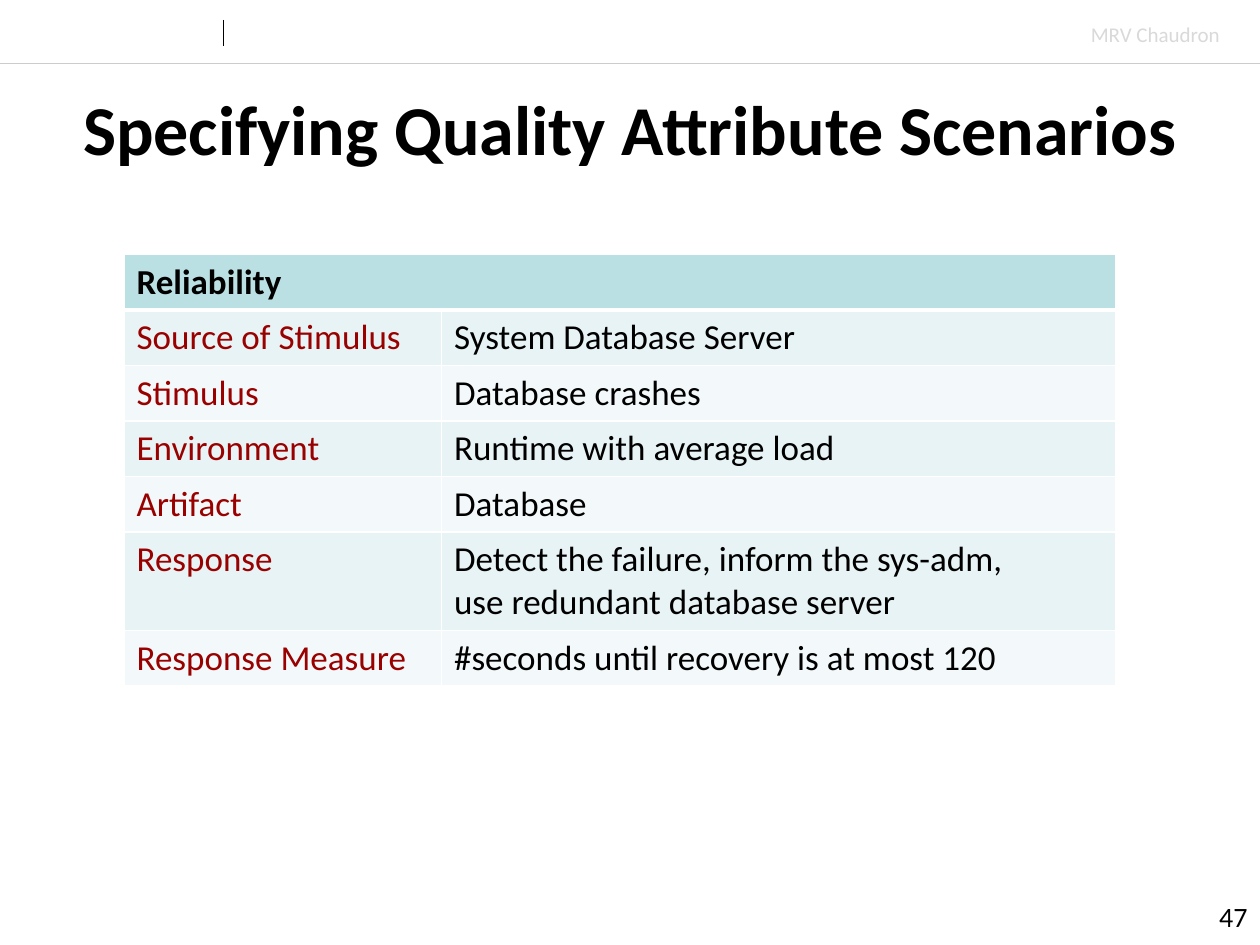
from lxml import etree
from pptx import Presentation
from pptx.dml.color import RGBColor
from pptx.enum.shapes import MSO_CONNECTOR
from pptx.enum.text import MSO_ANCHOR, MSO_AUTO_SIZE, PP_ALIGN
from pptx.oxml.ns import qn
from pptx.util import Cm, Pt

STRAIGHT = MSO_CONNECTOR.STRAIGHT
MIDDLE, TOP = MSO_ANCHOR.MIDDLE, MSO_ANCHOR.TOP
LEFT, CENTER, RIGHT = PP_ALIGN.LEFT, PP_ALIGN.CENTER, PP_ALIGN.RIGHT
NO_AUTOFIT = MSO_AUTO_SIZE.NONE

BLACK = RGBColor(0x00, 0x00, 0x00)
WHITE = RGBColor(0xFF, 0xFF, 0xFF)
RULE_GRAY = RGBColor(0xCC, 0xCC, 0xCC)
AUTHOR_GRAY = RGBColor(0xD9, 0xD9, 0xD9)
LABEL_RED = RGBColor(0x99, 0x00, 0x00)
HEADER_TEAL = RGBColor(0xBB, 0xE0, 0xE3)
BAND_COLORS = (RGBColor(0xE7, 0xF3, 0xF4), RGBColor(0xF3, 0xF9, 0xFA))

FONT_NAME = "Calibri"
TITLE = "Specifying Quality Attribute Scenarios"
ATTRIBUTE = "Reliability"
SCENARIO = (
    ("Source of Stimulus", "System Database Server"),
    ("Stimulus", "Database crashes"),
    ("Environment", "Runtime with average load"),
    ("Artifact", "Database"),
    ("Response", "Detect the failure, inform the sys-adm, \vuse redundant database server"),
    ("Response Measure", "#seconds until recovery is at most 120"),
)


def write_text(text_frame, text, size, color, bold=False, align=LEFT):
    text_frame.text = text
    paragraph = text_frame.paragraphs[0]
    paragraph.alignment = align
    for run in paragraph.runs:
        font_format = {"name": FONT_NAME, "size": Pt(size), "bold": bold}
        for attribute, value in font_format.items():
            setattr(run.font, attribute, value)
        run.font.color.rgb = color


def format_frame(text_frame, wrap, anchor):
    frame_format = {"word_wrap": wrap, "auto_size": NO_AUTOFIT, "vertical_anchor": anchor}
    for attribute, value in frame_format.items():
        setattr(text_frame, attribute, value)


def place(shape, box):
    for attribute, value in zip(("left", "top", "width", "height"), box):
        setattr(shape, attribute, value)


def add_rule(slide, start, end, color, width):
    connector = slide.shapes.add_connector(STRAIGHT, *start, *end)
    connector.line.color.rgb = color
    connector.line.width = Pt(width)
    etree.SubElement(connector._element.spPr, qn("a:effectLst"))


def add_header(slide, box):
    left, top, width, height = box
    bottom = top + height
    add_rule(slide, (left, bottom), (left + width, bottom), RULE_GRAY, 0.25)
    divider = left + Cm(4.5)
    add_rule(slide, (divider, top + Cm(0.4)), (divider, top + Cm(0.92)), BLACK, 0.5)
    author = slide.shapes.add_textbox(left + width - Cm(3.66), top + Cm(0.3), Cm(3.12), Cm(0.76))
    format_frame(author.text_frame, False, TOP)
    write_text(author.text_frame, "MRV Chaudron", 12, AUTHOR_GRAY)


def add_title(slide, box):
    title = slide.shapes.title
    place(title, box)
    format_frame(title.text_frame, True, MIDDLE)
    write_text(title.text_frame, TITLE, 40, BLACK, True, CENTER)


def add_page_number(slide, box):
    number = slide.shapes.add_textbox(*box)
    format_frame(number.text_frame, True, MIDDLE)
    write_text(number.text_frame, "47", 16, BLACK, align=RIGHT)


def set_borders(cell, widths):
    properties = cell._tc.get_or_add_tcPr()
    for side, width in widths.items():
        border = etree.SubElement(properties, qn(f"a:ln{side}"), w=str(Pt(width)))
        fill = etree.SubElement(border, qn("a:solidFill"))
        etree.SubElement(fill, qn("a:srgbClr"), val=str(WHITE))


def fill_cell(cell, text, text_color, fill_color, widths, bold=False):
    set_borders(cell, widths)
    cell.fill.solid()
    cell.fill.fore_color.rgb = fill_color
    if text:
        write_text(cell.text_frame, text, 20, text_color, bold)


def add_scenario_table(slide, box):
    table = slide.shapes.add_table(len(SCENARIO) + 1, 2, *box).table
    label_width = Cm(6.4)
    table.columns[0].width = label_width
    table.columns[1].width = box[2] - label_width
    thin = {"L": 1, "R": 1, "T": 1, "B": 1}
    header_borders = {**thin, "B": 3}
    table.cell(0, 0).merge(table.cell(0, 1))
    for column, text in enumerate((ATTRIBUTE, "")):
        fill_cell(table.cell(0, column), text, BLACK, HEADER_TEAL, header_borders, True)
    for row, entry in enumerate(SCENARIO, start=1):
        borders = {**thin, "T": 3} if row == 1 else thin
        band = BAND_COLORS[(row - 1) % 2]
        for column, color in enumerate((LABEL_RED, BLACK)):
            fill_cell(table.cell(row, column), entry[column], color, band, borders)


def main():
    presentation = Presentation()
    presentation.slide_width = Cm(25.4)
    presentation.slide_height = Cm(19.05)
    slide = presentation.slides.add_slide(presentation.slide_layouts[5])
    add_header(slide, (0, 0, Cm(25.4), Cm(1.27)))
    add_title(slide, (0, Cm(1.52), Cm(25.4), Cm(2.1)))
    add_page_number(slide, (Cm(24.28), Cm(18.03), Cm(1.12), Cm(0.9)))
    add_scenario_table(slide, (Cm(2.5), Cm(5.13), Cm(20), Cm(7.28)))
    presentation.save("out.pptx")


if __name__ == "__main__":
    main()
